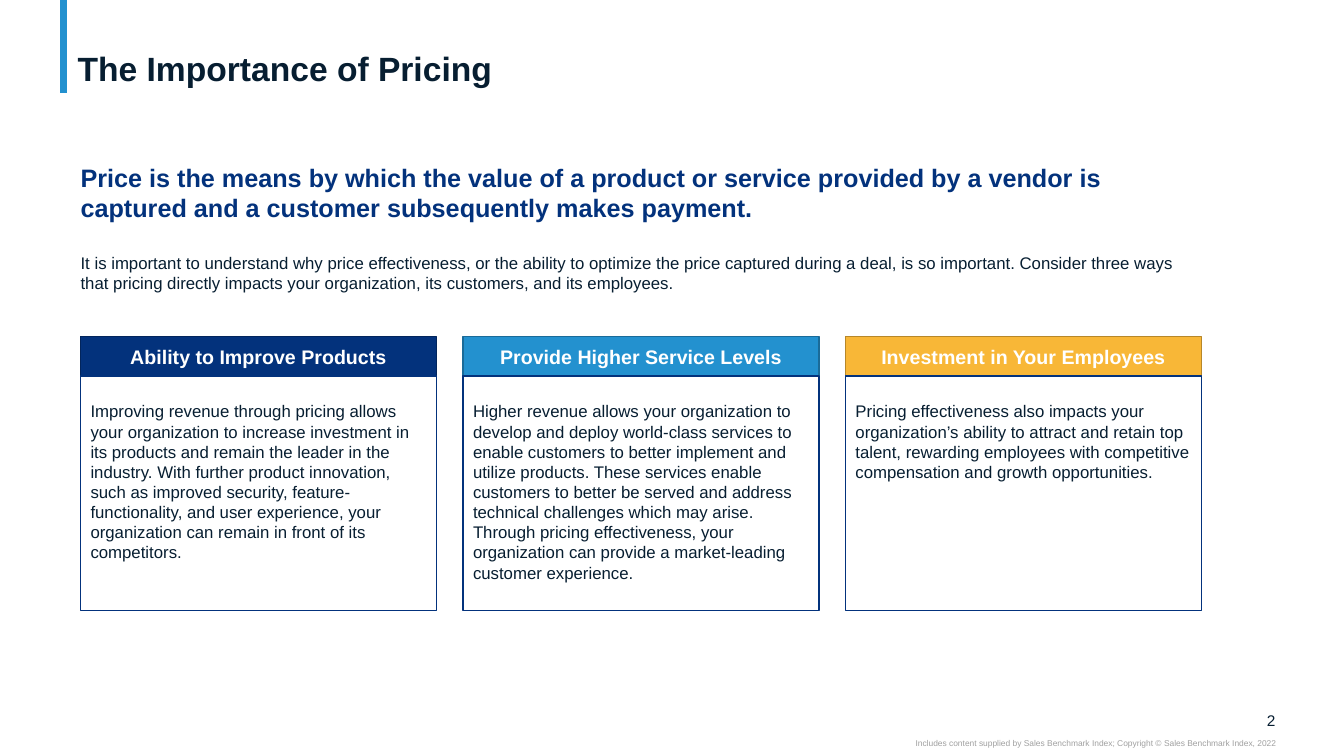
from dataclasses import dataclass

from lxml import etree
from pptx import Presentation
from pptx.dml.color import RGBColor
from pptx.enum.shapes import MSO_CONNECTOR, MSO_SHAPE
from pptx.enum.text import MSO_ANCHOR, PP_ALIGN
from pptx.oxml.ns import qn
from pptx.util import Pt

LINE = MSO_CONNECTOR.STRAIGHT
RECT = MSO_SHAPE.RECTANGLE
TOP, MIDDLE, BOTTOM = MSO_ANCHOR.TOP, MSO_ANCHOR.MIDDLE, MSO_ANCHOR.BOTTOM
LEFT, CENTER, RIGHT = PP_ALIGN.LEFT, PP_ALIGN.CENTER, PP_ALIGN.RIGHT


@dataclass(frozen=True)
class Theme:
    font: str = "Arial"
    ink: str = "071E31"
    navy: str = "03327C"
    blue: str = "2391CF"
    gold: str = "F8B737"
    white: str = "FFFFFF"
    grey: str = "A0A0A0"
    title: float = 24
    lead: float = 18
    head: float = 14
    body: float = 12
    page: float = 11
    note: float = 6


THEME = Theme()

# Header text, fill, outline, body text
CARDS = [
    ("Ability to Improve Products", THEME.navy, "02255C",
     "Improving revenue through pricing allows your organization to increase "
     "investment in its products and remain the leader in the industry. With "
     "further product innovation, such as improved security, "
     "feature-functionality, and user experience, your organization can remain "
     "in front of its competitors."),
    ("Provide Higher Service Levels", THEME.blue, "1A6B99",
     "Higher revenue allows your organization to develop and deploy world-class "
     "services to enable customers to better implement and utilize products. "
     "These services enable customers to better be served and address technical "
     "challenges which may arise. Through pricing effectiveness, your "
     "organization can provide a market-leading customer experience."),
    ("Investment in Your Employees", THEME.gold, "B78729",
     "Pricing effectiveness also impacts your organization’s ability to attract "
     "and retain top talent, rewarding employees with competitive compensation "
     "and growth opportunities."),
]
CARD_X, CARD_Y, CARD_W, STEP = 57.6, 240.5, 254.2, 273.2
HEAD_H, BODY_H = 28, 167.8


def rgb(code):
    return RGBColor.from_string(code)


def set_frame(shape, anchor=TOP, pad=(0, 0, 0, 0)):
    frame = shape.text_frame
    frame.word_wrap = True
    frame.vertical_anchor = anchor
    (frame.margin_left, frame.margin_top,
     frame.margin_right, frame.margin_bottom) = map(Pt, pad)
    return frame


def write(para, text, size, color, bold=False, align=LEFT):
    para.alignment = align
    run = para.add_run()
    run.text = text
    font = run.font
    font.name, font.size, font.bold = THEME.font, Pt(size), bold
    font.color.rgb = rgb(color)


def add_text(slide, x, y, w, h, anchor=TOP, pad=(0, 0, 0, 0)):
    box = slide.shapes.add_textbox(Pt(x), Pt(y), Pt(w), Pt(h))
    return set_frame(box, anchor, pad)


def add_rect(slide, x, y, w, h, fill, edge):
    rect = slide.shapes.add_shape(RECT, Pt(x), Pt(y), Pt(w), Pt(h))
    rect.shadow.inherit = False
    rect.fill.solid()
    rect.fill.fore_color.rgb = rgb(fill)
    rect.line.color.rgb = rgb(edge)
    rect.line.width = Pt(1)
    return rect


def add_line(slide, x1, y1, x2, y2, color, width):
    line = slide.shapes.add_connector(LINE, Pt(x1), Pt(y1), Pt(x2), Pt(y2))
    line.line.color.rgb = rgb(color)
    line.line.width = Pt(width)
    etree.SubElement(line._element.spPr, qn("a:effectLst"))


def add_card(slide, x, head, fill, edge, body):
    top = add_rect(slide, x, CARD_Y, CARD_W, HEAD_H, fill, edge)
    frame = set_frame(top, MIDDLE, (7.2, 3.6, 7.2, 3.6))
    write(frame.paragraphs[0], head, THEME.head, THEME.white, True, CENTER)
    base = add_rect(slide, x, CARD_Y + HEAD_H, CARD_W, BODY_H,
                    THEME.white, THEME.navy)
    frame = set_frame(base, TOP, (7.2, 18, 7.2, 3.6))
    write(frame.paragraphs[0], body, THEME.body, THEME.ink)


def main():
    deck = Presentation()
    deck.slide_width, deck.slide_height = Pt(960), Pt(540)
    slide = deck.slides.add_slide(deck.slide_layouts[6])

    # Title with accent bar
    add_line(slide, 45.4, 0, 45.4, 66.5, THEME.blue, 5)
    frame = add_text(slide, 48.4, 3, 863, 60.5, BOTTOM, (7.2, 0, 7.2, 0))
    frame.paragraphs[0].line_spacing = 0.9
    write(frame.paragraphs[0], "The Importance of Pricing",
          THEME.title, THEME.ink, True)

    # Lead statement and introduction
    frame = add_text(slide, 57.6, 116, 801.4, 106.5)
    write(frame.paragraphs[0],
          "Price is the means by which the value of a product or service "
          "provided by a vendor is captured and a customer subsequently makes "
          "payment.", THEME.lead, THEME.navy, True)
    intro = frame.add_paragraph()
    intro.space_before = Pt(21)
    write(intro,
          "It is important to understand why price effectiveness, or the "
          "ability to optimize the price captured during a deal, is so "
          "important. Consider three ways that pricing directly impacts your "
          "organization, its customers, and its employees.",
          THEME.body, THEME.ink)

    # Three cards
    for i, card in enumerate(CARDS):
        add_card(slide, CARD_X + i * STEP, *card)

    # Footer
    frame = add_text(slide, 887, 507.6, 24, 13.7, MIDDLE)
    write(frame.paragraphs[0], "2", THEME.page, THEME.ink, align=RIGHT)
    frame = add_text(slide, 540, 527, 371.5, 7.2)
    write(frame.paragraphs[0],
          "Includes content supplied by Sales Benchmark Index; "
          "Copyright © Sales Benchmark Index, 2022",
          THEME.note, THEME.grey, align=RIGHT)

    deck.save("out.pptx")


if __name__ == "__main__":
    main()
